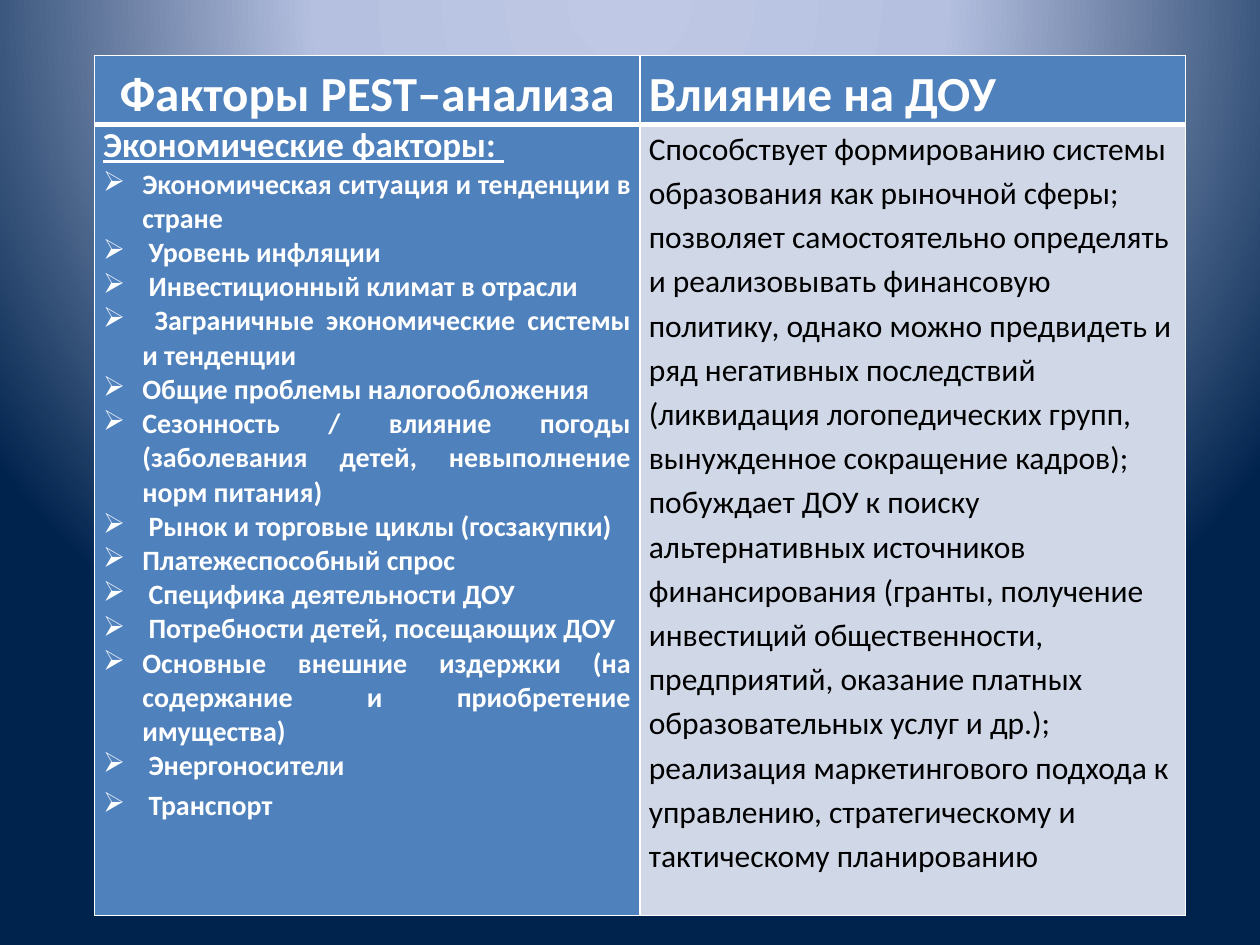
"""Build a slide with a PEST analysis table of economic factors."""
from pptx import Presentation
from pptx.dml.color import RGBColor
from pptx.enum.text import PP_ALIGN as Align
from pptx.oxml import parse_xml
from pptx.oxml.ns import nsdecls
from pptx.util import Cm, Pt

HEADERS = [("Факторы PEST–анализа", Align.CENTER), ("Влияние на ДОУ", Align.LEFT)]
FACTORS_TITLE = "Экономические факторы: "
FACTORS = [
    "Экономическая ситуация и тенденции в стране ",
    " Уровень инфляции ",
    " Инвестиционный климат в отрасли ",
    " Заграничные экономические системы и тенденции ",
    "Общие проблемы налогообложения ",
    "Сезонность / влияние погоды (заболевания детей, невыполнение норм питания) ",
    " Рынок и торговые циклы (госзакупки) ",
    "Платежеспособный спрос ",
    " Специфика деятельности ДОУ ",
    " Потребности детей, посещающих ДОУ ",
    "Основные внешние издержки (на содержание и приобретение имущества) ",
    " Энергоносители ",
]
LAST_FACTOR = " Транспорт"
INFLUENCE = (
    "Способствует формированию системы образования как рыночной сферы; "
    "позволяет самостоятельно определять и реализовывать финансовую политику, "
    "однако можно предвидеть и ряд негативных последствий (ликвидация "
    "логопедических групп, вынужденное сокращение кадров); побуждает ДОУ к поиску "
    "альтернативных источников финансирования (гранты, получение инвестиций "
    "общественности, предприятий, оказание платных образовательных услуг и др.); "
    "реализация маркетингового подхода к управлению, стратегическому и "
    "тактическому планированию"
)

FONT = "Calibri"
WHITE = RGBColor(0xFF, 0xFF, 0xFF)
BLACK = RGBColor(0x00, 0x00, 0x00)
BLUE = RGBColor(0x4F, 0x81, 0xBD)
PALE = RGBColor(0xD0, 0xD8, 0xE8)
BACKGROUND_STOPS = [
    (0, RGBColor(0xBF, 0xC9, 0xE5)),
    (40, RGBColor(0xB5, 0xC0, 0xE0)),
    (100, RGBColor(0x00, 0x23, 0x4D)),
]
COLUMN_WIDTH = Cm(11)
ROW_HEIGHTS = [Cm(1.35), Cm(15.95)]
BULLET_INDENT = Cm(0.79)
THIN, THICK = Pt(1), Pt(3)


def set_background(slide):
    stops = "".join(
        f'<a:gs pos="{position * 1000}"><a:srgbClr val="{color}"/></a:gs>'
        for position, color in BACKGROUND_STOPS
    )
    background = parse_xml(
        f'<p:bg {nsdecls("p", "a")}><p:bgPr><a:gradFill rotWithShape="1">'
        f'<a:gsLst>{stops}</a:gsLst><a:path path="circle">'
        '<a:fillToRect l="50000" t="-80000" r="50000" b="180000"/></a:path>'
        "</a:gradFill><a:effectLst/></p:bgPr></p:bg>"
    )
    slide.element.cSld.insert(0, background)


def format_cell(cell, fill, top, bottom):
    cell.margin_left = cell.margin_right = Cm(0.18)
    cell.margin_top = cell.margin_bottom = 0
    cell.fill.solid()
    cell.fill.fore_color.rgb = fill
    properties = cell._tc.get_or_add_tcPr()
    borders = {"lnL": THIN, "lnR": THIN, "lnT": top, "lnB": bottom}
    for index, (tag, width) in enumerate(borders.items()):
        line = parse_xml(
            f'<a:{tag} {nsdecls("a")} w="{width}"><a:solidFill>'
            f'<a:srgbClr val="{WHITE}"/></a:solidFill></a:{tag}>'
        )
        properties.insert(index, line)


def add_text(cell, text, size, color=WHITE, bold=True, underline=False,
             align=Align.LEFT, spacing=1.0, bullet=False):
    frame = cell.text_frame
    paragraph = frame.paragraphs[0] if not frame.text else frame.add_paragraph()
    paragraph.alignment = align
    paragraph.line_spacing = spacing
    if bullet:
        properties = paragraph._p.get_or_add_pPr()
        properties.set("marL", str(BULLET_INDENT))
        properties.set("indent", str(-BULLET_INDENT))
        properties.append(parse_xml(f'<a:buChar {nsdecls("a")} char="➢"/>'))
    run = paragraph.add_run()
    run.text = text
    font = run.font
    font.name, font.size, font.color.rgb = FONT, Pt(size), color
    font.bold, font.underline = bold, underline


def main():
    presentation = Presentation()
    presentation.slide_width, presentation.slide_height = Cm(25.4), Cm(19.05)
    slide = presentation.slides.add_slide(presentation.slide_layouts[6])
    set_background(slide)

    table = slide.shapes.add_table(
        2, 2, Cm(1.9), Cm(1.12), 2 * COLUMN_WIDTH, sum(ROW_HEIGHTS)
    ).table
    table.horz_banding = False
    for column in table.columns:
        column.width = COLUMN_WIDTH
    for row, height in zip(table.rows, ROW_HEIGHTS):
        row.height = height

    for index, (header, align) in enumerate(HEADERS):
        cell = table.cell(0, index)
        format_cell(cell, BLUE, THIN, THICK)
        add_text(cell, header, 28, align=align, spacing=1.15)

    factors, influence = table.cell(1, 0), table.cell(1, 1)
    format_cell(factors, BLUE, THICK, THIN)
    format_cell(influence, PALE, THICK, THIN)
    add_text(factors, FACTORS_TITLE, 20, underline=True, align=Align.JUSTIFY)
    for factor in FACTORS:
        add_text(factors, factor, 16, align=Align.JUSTIFY, bullet=True)
    add_text(factors, LAST_FACTOR, 16, spacing=1.15, bullet=True)
    add_text(influence, INFLUENCE, 18, color=BLACK, bold=False, spacing=1.15)

    presentation.save("out.pptx")


if __name__ == "__main__":
    main()
